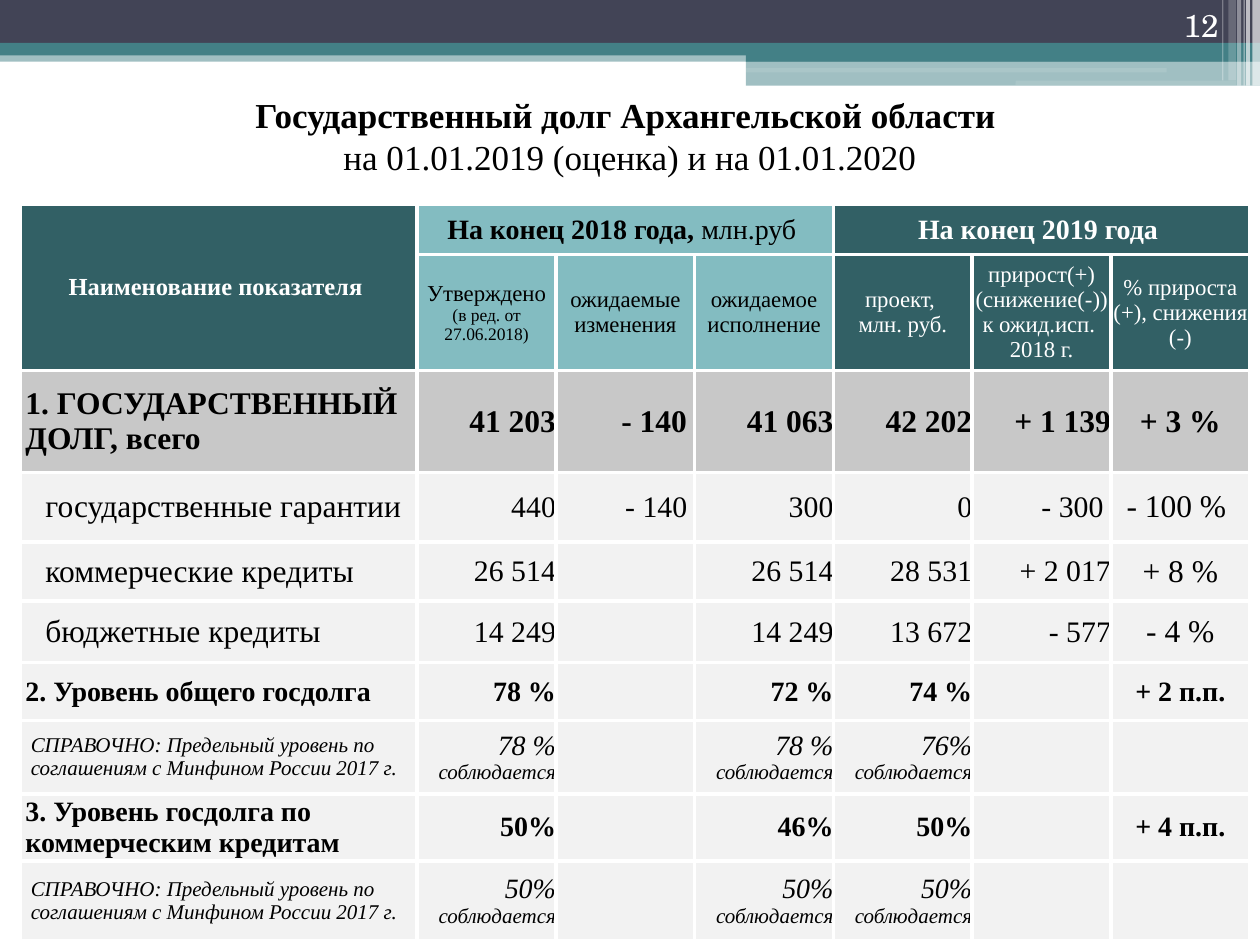
import pptx
import pptx.util
import pptx.dml.color
import pptx.enum.shapes
import pptx.enum.text
import pptx.oxml
import pptx.oxml.ns

Pt = pptx.util.Pt
SHAPE = pptx.enum.shapes.MSO_SHAPE
ALIGN = {"l": pptx.enum.text.PP_ALIGN.LEFT,
         "c": pptx.enum.text.PP_ALIGN.CENTER,
         "r": pptx.enum.text.PP_ALIGN.RIGHT}
ANCHOR = pptx.enum.text.MSO_ANCHOR
NS = pptx.oxml.ns.nsdecls("a")

WHITE, BLACK = "FFFFFF", "000000"
NAVY, TEAL = "424456", "438086"
DEEP, PALE, GRAY, LIGHT = "326065", "83BCC1", "C8C8C8", "F2F2F2"


def color(code):
    return pptx.dml.color.RGBColor.from_string(code)


def write(frame, *paras, align="l", **base):
    """Each paragraph is a string or a list of (text, format) runs."""
    frame.word_wrap = True
    for num, runs in enumerate(paras):
        para = frame.paragraphs[0] if num == 0 else frame.add_paragraph()
        para.alignment = ALIGN[align]
        for text, extra in ([(runs, {})] if isinstance(runs, str) else runs):
            if text == "\n":
                para.add_line_break()
                continue
            form = {"size": 18, "bold": False, "slant": False, "tint": BLACK,
                    "face": "Times New Roman", **base, **extra}
            run = para.add_run()
            run.text = text
            run.font.name = form["face"]
            run.font.size = Pt(form["size"])
            run.font.bold = form["bold"]
            run.font.italic = form["slant"]
            run.font.color.rgb = color(form["tint"])


def bar(slide, left, top, width, height, tint, alpha=100, kind=SHAPE.RECTANGLE):
    shape = slide.shapes.add_shape(kind, Pt(left), Pt(top), Pt(width), Pt(height))
    shape.shadow.inherit = False
    shape.line.fill.background()
    shape.fill.solid()
    shape.fill.fore_color.rgb = color(tint)
    if alpha < 100:
        node = shape.fill._xPr.find(".//" + pptx.oxml.ns.qn("a:srgbClr"))
        node.append(pptx.oxml.parse_xml(f'<a:alpha {NS} val="{alpha * 1000}"/>'))


def band(slide, left, top, width):
    # Full-width stripes
    bar(slide, left, top + 28.8, width, 6.5, TEAL, 50)
    bar(slide, left, top, width, 24.5, NAVY)
    bar(slide, left, top + 24.5, width, 7.2, TEAL)
    # Stepped block on the right
    step = left + 426.2
    bar(slide, step, top + 28.1, width - 426.2, 7.2, TEAL)
    bar(slide, step, top + 34.6, width - 426.2, 14.4, TEAL, 50)
    for across, down, length in ((425.5, 38.9, 241.2), (580.3, 46.1, 126)):
        bar(slide, left + across, top + down, length, 2.5, WHITE, 11,
            SHAPE.ROUNDED_RECTANGLE)
    # Upright strips, measured from the right edge
    for back, wide, tall, alpha in ((4.3, 4.3, 49, 65), (7.9, 2.2, 49, 65),
                                    (9.4, 0.7, 49, 60), (13, 2.2, 49, 40),
                                    (18, 4.3, 46, 20), (21.6, 0.7, 46, 30)):
        bar(slide, left + width - back, top, wide, tall, WHITE, alpha)


def label(slide, left, top, width, height, anchor, *paras, **form):
    box = slide.shapes.add_textbox(Pt(left), Pt(top), Pt(width), Pt(height))
    box.text_frame.vertical_anchor = anchor
    write(box.text_frame, *paras, **form)


def paint(cell, fill, indent=0):
    cell.margin_left = Pt(indent)
    cell.margin_right = cell.margin_top = cell.margin_bottom = 0
    cell.vertical_anchor = ANCHOR.MIDDLE
    props = cell._tc.get_or_add_tcPr()
    for side in "LRTB":
        props.append(pptx.oxml.parse_xml(
            f'<a:ln{side} {NS} w="{Pt(2.25)}"><a:solidFill>'
            f'<a:srgbClr val="{WHITE}"/></a:solidFill></a:ln{side}>'))
    cell.fill.solid()
    cell.fill.fore_color.rgb = color(fill)


# Row styles: indent, fill, value size, rate size, label format
TOTAL = (3, GRAY, 18, 18, {"bold": True})
PART = (14.4, LIGHT, 17, 18, {})
LEVEL = (3, LIGHT, 16, 16, {"size": 16, "bold": True})
NOTE = (6, LIGHT, 16, 16, {"size": 12, "slant": True})
LIMIT = "СПРАВОЧНО: Предельный уровень по соглашениям с Минфином России 2017 г."
KEPT = ("соблюдается", {"size": 12})

# Style, height, label, values
ROWS = [
    (TOTAL, 58.3, "1. ГОСУДАРСТВЕННЫЙ ДОЛГ, всего",
     ["41 203", "- 140 ", "41 063", "42 202", "+ 1 139", "+ 3 %"]),
    (PART, 39.6, "государственные гарантии",
     ["440", "- 140 ", "300", "0", "- 300 ", "- 100 % "]),
    (PART, 33.8, "коммерческие кредиты",
     ["26 514", "", "26 514", "28 531", "+ 2 017", "+ 8 %"]),
    (PART, 35.3, "бюджетные кредиты",
     ["14 249", "", "14 249", "13 672", "- 577", "- 4 %"]),
    (LEVEL, 33.1, "2. Уровень общего госдолга",
     ["78 %", "", "72 %", "74 %", "", "+ 2 п.п."]),
    (NOTE, 41.8, LIMIT, ["78 %", "", "78 %", "76%", "", ""]),
    (LEVEL, 37.4, "3. Уровень госдолга по коммерческим кредитам",
     ["50%", "", "46%", "50%", "", "+ 4 п.п."]),
    (NOTE, 45.4, LIMIT, ["50%", "", "50%", "50%", "", ""]),
]

HEADS = [
    ["Утверждено", [("(в ред. от 27.06.2018)", {"size": 10})]],
    ["ожидаемые изменения"],
    ["ожидаемое исполнение"],
    ["проект, ", "млн. руб."],
    ["прирост(+) (снижение(-)) к ожид.исп. ", "2018 г."],
    ["% прироста (+), снижения (-)"],
]


def header(grid):
    for row in range(2):
        for col in range(7):
            paint(grid.cell(row, col), PALE if 1 <= col <= 3 else DEEP)
    for start, end in (((0, 0), (1, 0)), ((0, 1), (0, 3)), ((0, 4), (0, 6))):
        grid.cell(*start).merge(grid.cell(*end))
    form = {"align": "c", "bold": True, "tint": WHITE}
    write(grid.cell(0, 0).text_frame, "Наименование показателя ", size=14, **form)
    write(grid.cell(0, 1).text_frame,
          [("На конец 2018 года, ", {"bold": True}), ("млн.руб ", {})],
          align="c", size=16)
    write(grid.cell(0, 4).text_frame, "На конец 2019 года ", size=16, **form)
    for col, paras in enumerate(HEADS, 1):
        write(grid.cell(1, col).text_frame, *paras, align="c", size=13,
              tint=BLACK if col <= 3 else WHITE)


def debt(slide, left, top, width, height):
    grid = slide.shapes.add_table(len(ROWS) + 2, 7, Pt(left), Pt(top),
                                  Pt(width), Pt(height)).table
    first = 226.8
    for col in range(7):
        grid.columns[col].width = Pt(first if col == 0 else (width - first) / 6)
    for row, tall in enumerate([28.8, 66.2] + [item[1] for item in ROWS]):
        grid.rows[row].height = Pt(tall)
    header(grid)
    # Body rows
    for row, (style, _, name, values) in enumerate(ROWS, 2):
        indent, fill, size, rate, form = style
        cell = grid.cell(row, 0)
        paint(cell, fill, indent)
        write(cell.text_frame, name, **form)
        for col, value in enumerate(values, 1):
            cell = grid.cell(row, col)
            paint(cell, fill)
            if value:
                paras = [value, [KEPT]] if style is NOTE else [value]
                last = col == 6
                write(cell.text_frame, *paras, align="c" if last else "r",
                      **{**form, "size": rate if last else size})


def main():
    deck = pptx.Presentation()
    deck.slide_width, deck.slide_height = Pt(720), Pt(540)
    slide = deck.slides.add_slide(deck.slide_layouts[6])
    band(slide, 0, 0, 720)
    # Page number
    label(slide, 643.7, 0, 59.8, 28.8, ANCHOR.BOTTOM, "12", align="r",
          face="TeX Gyre Schola", tint=WHITE)
    debt(slide, 11.6, 116.8, 702.6, 420)
    # Title
    label(slide, 0, 54.7, 720, 45.4, ANCHOR.MIDDLE,
          [("Государственный долг Архангельской области ", {"bold": True}),
           ("\n", {}), ("на 01.01.2019 (оценка) и на 01.01.2020", {})],
          align="c", size=20)
    deck.save("out.pptx")


if __name__ == "__main__":
    main()
